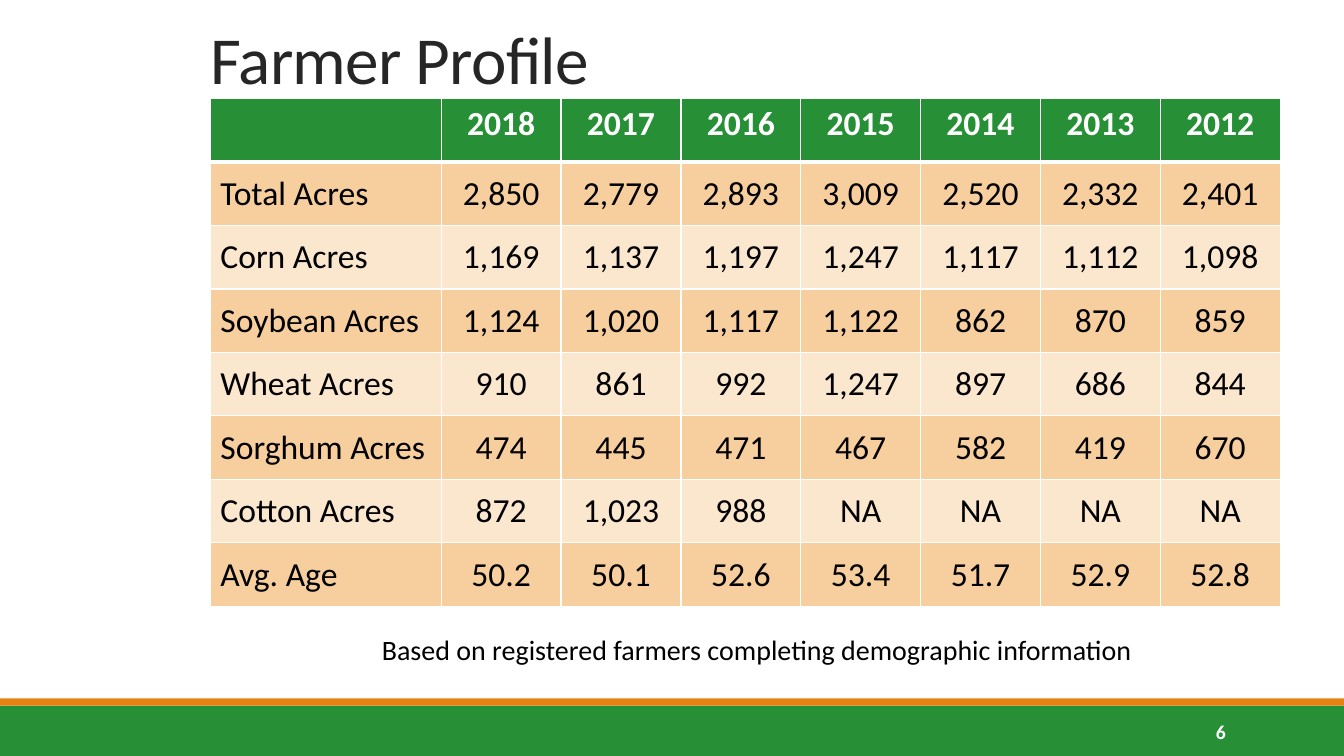
from dataclasses import dataclass

from lxml.etree import SubElement
from pptx import Presentation
from pptx.dml.color import RGBColor
from pptx.enum.shapes import MSO_SHAPE as Preset
from pptx.enum.text import MSO_ANCHOR as Anchor, MSO_AUTO_SIZE as AutoSize, PP_ALIGN as Align
from pptx.oxml.ns import qn
from pptx.slide import Slide
from pptx.table import _Cell as Cell
from pptx.text.text import TextFrame
from pptx.util import Cm, Pt


@dataclass(frozen=True)
class Theme:
    font: str = "Calibri"
    green: str = "279037"
    orange: str = "E48312"
    dark_band: str = "F7CE9D"
    light_band: str = "FBE6CE"
    white: str = "FFFFFF"
    black: str = "000000"
    title_color: str = "262626"
    title_size: int = 48
    table_size: int = 24
    caption_size: int = 20
    number_size: int = 14


@dataclass(frozen=True)
class Box:
    """Left, top, width and height in centimetres."""
    left: float
    top: float
    width: float
    height: float

    def lengths(self) -> tuple[Cm, Cm, Cm, Cm]:
        return Cm(self.left), Cm(self.top), Cm(self.width), Cm(self.height)


@dataclass(frozen=True)
class Bar:
    box: Box
    color: str


@dataclass(frozen=True)
class Label:
    text: str
    box: Box
    size: int
    color: str
    bold: bool = False
    anchor: Anchor = Anchor.TOP


THEME = Theme()
SLIDE_WIDTH, SLIDE_HEIGHT = 33.87, 19.05
TITLE_BOX = Box(5.05, 0, 20.96, 2.59)
TABLE_LEFT, TABLE_TOP = 5.3, 2.48
NAME_WIDTH, YEAR_WIDTH, ROW_HEIGHT = 5.82, 3.02, 1.6
THIN_BORDER, HEADER_BORDER = 1, 3

BARS = [
    Bar(Box(0, 17.78, SLIDE_WIDTH, 1.27), THEME.green),
    Bar(Box(0, 17.6, SLIDE_WIDTH, 0.18), THEME.orange),
]
LABELS = [
    Label("Based on registered farmers completing demographic information",
          Box(8.15, 15.82, 20.62, 1.12), THEME.caption_size, THEME.black),
    Label("6", Box(27.51, 17.93, 3.63, 1.02), THEME.number_size, THEME.white,
          bold=True, anchor=Anchor.MIDDLE),
]
PROFILE = [
    ["", "2018", "2017", "2016", "2015", "2014", "2013", "2012"],
    ["Total Acres", "2,850", "2,779", "2,893", "3,009", "2,520", "2,332", "2,401"],
    ["Corn Acres", "1,169", "1,137", "1,197", "1,247", "1,117", "1,112", "1,098"],
    ["Soybean Acres", "1,124", "1,020", "1,117", "1,122", "862", "870", "859"],
    ["Wheat Acres", "910", "861", "992", "1,247", "897", "686", "844"],
    ["Sorghum Acres", "474", "445", "471", "467", "582", "419", "670"],
    ["Cotton Acres", "872", "1,023", "988", "NA", "NA", "NA", "NA"],
    ["Avg. Age", "50.2", "50.1", "52.6", "53.4", "51.7", "52.9", "52.8"],
]


def write_text(frame: TextFrame, text: str, size: int, color: str,
               bold: bool = False, align: Align = Align.LEFT) -> None:
    frame.text = text
    paragraph = frame.paragraphs[0]
    paragraph.alignment = align
    for run in paragraph.runs:
        run.font.name = THEME.font
        run.font.size = Pt(size)
        run.font.bold = bold
        run.font.color.rgb = RGBColor.from_string(color)


def add_bar(slide: Slide, bar: Bar) -> None:
    shape = slide.shapes.add_shape(Preset.RECTANGLE, *bar.box.lengths())
    shape.shadow.inherit = False
    shape.fill.solid()
    shape.fill.fore_color.rgb = RGBColor.from_string(bar.color)
    shape.line.fill.background()


def add_label(slide: Slide, label: Label) -> None:
    frame = slide.shapes.add_textbox(*label.box.lengths()).text_frame
    frame.word_wrap = True
    frame.vertical_anchor = label.anchor
    write_text(frame, label.text, label.size, label.color, label.bold, Align.RIGHT)


def set_title(slide: Slide, text: str) -> None:
    title = slide.shapes.title
    title.left, title.top, title.width, title.height = TITLE_BOX.lengths()
    frame = title.text_frame
    frame.word_wrap = True
    frame.auto_size = AutoSize.NONE
    frame.vertical_anchor = Anchor.BOTTOM
    write_text(frame, text, THEME.title_size, THEME.title_color)
    paragraph = frame.paragraphs[0]
    paragraph.line_spacing = 0.85
    paragraph.runs[0]._r.get_or_add_rPr().set("spc", "-50")


def set_borders(cell: Cell, top: int, bottom: int) -> None:
    properties = cell._tc.get_or_add_tcPr()
    widths = {"a:lnL": THIN_BORDER, "a:lnR": THIN_BORDER, "a:lnT": top, "a:lnB": bottom}
    for tag, width in widths.items():
        line = SubElement(properties, qn(tag), w=str(Pt(width)))
        fill = SubElement(line, qn("a:solidFill"))
        SubElement(fill, qn("a:srgbClr"), val=THEME.white)


def format_cell(cell: Cell, row: int, column: int, text: str) -> None:
    is_header = row == 0
    set_borders(cell, top=HEADER_BORDER if row == 1 else THIN_BORDER,
                bottom=HEADER_BORDER if is_header else THIN_BORDER)
    band = THEME.dark_band if row % 2 else THEME.light_band
    cell.fill.solid()
    cell.fill.fore_color.rgb = RGBColor.from_string(THEME.green if is_header else band)
    cell.vertical_anchor = Anchor.TOP if is_header else Anchor.MIDDLE
    write_text(cell.text_frame, text, THEME.table_size,
               THEME.white if is_header else THEME.black, is_header,
               Align.CENTER if column else Align.LEFT)


def add_profile_table(slide: Slide, rows: list[list[str]]) -> None:
    widths = [NAME_WIDTH] + [YEAR_WIDTH] * (len(rows[0]) - 1)
    box = Box(TABLE_LEFT, TABLE_TOP, sum(widths), ROW_HEIGHT * len(rows))
    table = slide.shapes.add_table(len(rows), len(widths), *box.lengths()).table
    for column, width in zip(table.columns, widths):
        column.width = Cm(width)
    for row_index, values in enumerate(rows):
        table.rows[row_index].height = Cm(ROW_HEIGHT)
        for column_index, value in enumerate(values):
            format_cell(table.cell(row_index, column_index), row_index, column_index, value)


def main() -> None:
    presentation = Presentation()
    presentation.slide_width = Cm(SLIDE_WIDTH)
    presentation.slide_height = Cm(SLIDE_HEIGHT)
    slide = presentation.slides.add_slide(presentation.slide_layouts[5])
    for bar in BARS:
        add_bar(slide, bar)
    set_title(slide, "Farmer Profile")
    add_profile_table(slide, PROFILE)
    for label in LABELS:
        add_label(slide, label)
    presentation.save("out.pptx")


if __name__ == "__main__":
    main()
